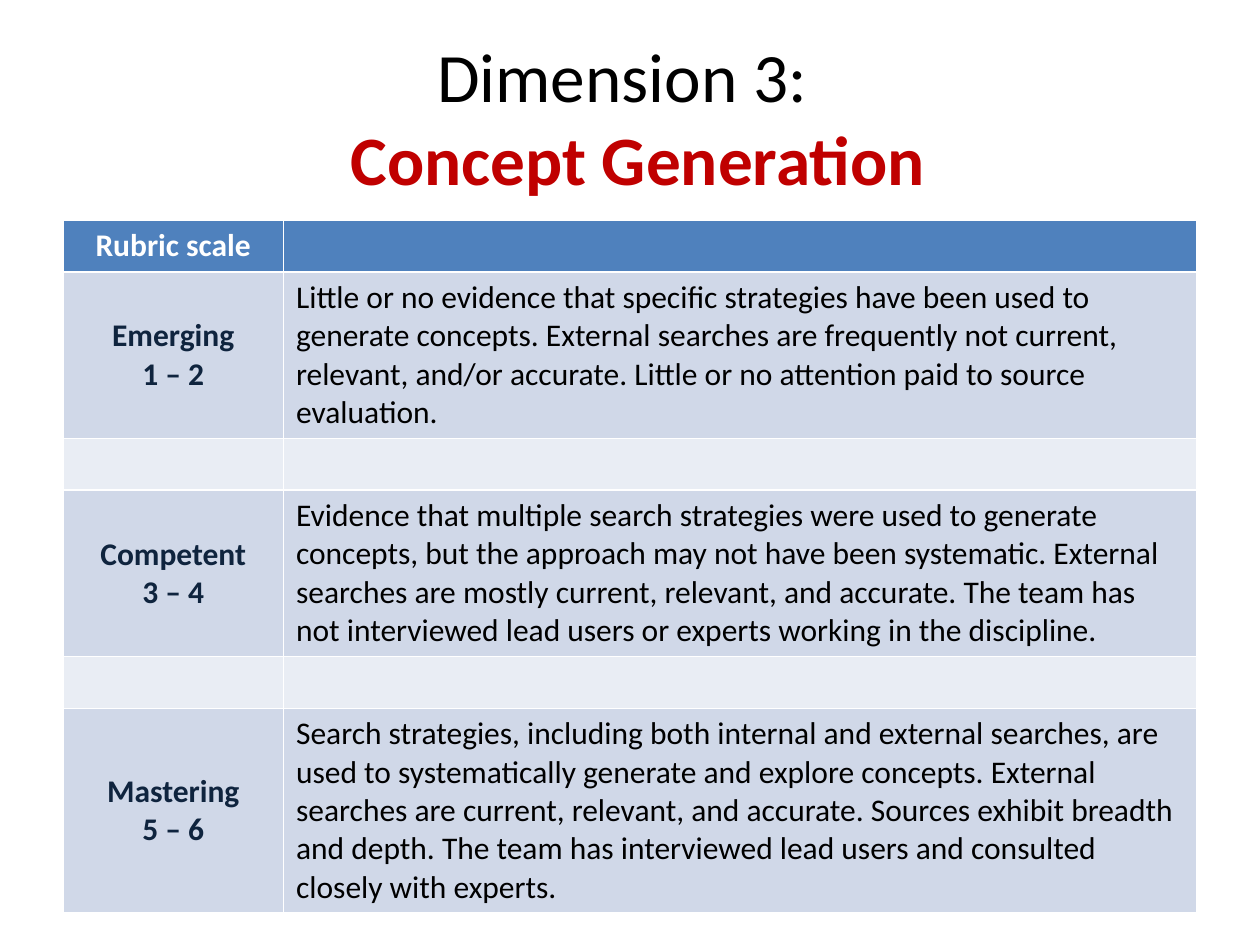
from dataclasses import dataclass

from pptx import Presentation
from pptx.dml.color import RGBColor
from pptx.enum.text import MSO_ANCHOR, MSO_AUTO_SIZE, PP_ALIGN
from pptx.util import Inches, Pt


@dataclass(frozen=True)
class Theme:
    font: str = "Calibri"
    title_size: float = 39.6
    body_size: float = 18
    black: str = "000000"
    white: str = "FFFFFF"
    accent: str = "C00000"
    level: str = "0F243E"
    header_fill: str = "4F81BD"
    level_fill: str = "D0D8E8"
    spacer_fill: str = "E9EDF4"


THEME = Theme()
COLUMN_WIDTHS = (1.75, 7.25)
THIN_ROW = 0.41

# Level name, score range, description paragraphs, row height
LEVELS = [
    ("Emerging", "1 – 2", [
        "Little or no evidence that specific strategies have been used to generate "
        "concepts. External searches are frequently not current,",
        "relevant, and/or accurate. Little or no attention paid to source evaluation.",
    ], 1.32),
    ("Competent", "3 – 4", [
        "Evidence that multiple search strategies were used to generate concepts, but "
        "the approach may not have been systematic. External",
        "searches are mostly current, relevant, and accurate. The team has not "
        "interviewed lead users or experts working in the discipline.",
    ], 1.32),
    ("Mastering", "5 – 6", [
        "Search strategies, including both internal and external searches, are used to "
        "systematically generate and explore concepts. External searches are current, "
        "relevant, and accurate. Sources exhibit breadth and depth. The team has "
        "interviewed lead users and consulted closely with experts.",
    ], 1.62),
]


def style_font(font, size, color, bold=False):
    font.name = THEME.font
    font.size = Pt(size)
    font.bold = bold
    font.color.rgb = RGBColor.from_string(color)


def fill_title(title, lead, dimension):
    title.left, title.top = Inches(0.5), Inches(0.3)
    title.width, title.height = Inches(9), Inches(1.25)
    frame = title.text_frame
    frame.auto_size = MSO_AUTO_SIZE.NONE
    frame.vertical_anchor = MSO_ANCHOR.MIDDLE
    heading = frame.paragraphs[0]
    heading.alignment = PP_ALIGN.CENTER
    lead_run = heading.add_run()
    lead_run.text = lead
    style_font(lead_run.font, THEME.title_size, THEME.black)
    heading.add_line_break()
    dimension_run = heading.add_run()
    dimension_run.text = dimension
    style_font(dimension_run.font, THEME.title_size, THEME.accent, bold=True)


def fill_cell(cell, lines, color, bold=False, align=PP_ALIGN.LEFT, anchor=MSO_ANCHOR.TOP):
    cell.text = "\n".join(lines)
    cell.vertical_anchor = anchor
    for paragraph in cell.text_frame.paragraphs:
        paragraph.alignment = align
        style_font(paragraph.font, THEME.body_size, color, bold)


def shade_row(row, height, color):
    row.height = Inches(height)
    for cell in row.cells:
        cell.fill.solid()
        cell.fill.fore_color.rgb = RGBColor.from_string(color)


def add_rubric(slide):
    row_count = 2 * len(LEVELS)
    heights = [THIN_ROW] * row_count
    heights[1::2] = [level[3] for level in LEVELS]
    rubric = slide.shapes.add_table(
        row_count, len(COLUMN_WIDTHS), Inches(0.5), Inches(1.75),
        Inches(sum(COLUMN_WIDTHS)), Inches(sum(heights))).table
    for column, width in zip(rubric.columns, COLUMN_WIDTHS):
        column.width = Inches(width)

    # Header, then levels separated by spacer rows
    for index, (row, height) in enumerate(zip(rubric.rows, heights)):
        spacer_or_level = THEME.level_fill if index % 2 else THEME.spacer_fill
        shade_row(row, height, spacer_or_level if index else THEME.header_fill)
    fill_cell(rubric.cell(0, 0), ["Rubric scale"], THEME.white, True, PP_ALIGN.CENTER)
    for index, (name, score, description, _) in enumerate(LEVELS):
        level_row = 2 * index + 1
        fill_cell(rubric.cell(level_row, 0), [name, score], THEME.level, True,
                  PP_ALIGN.CENTER, MSO_ANCHOR.MIDDLE)
        fill_cell(rubric.cell(level_row, 1), description, THEME.black)


def main():
    deck = Presentation()
    deck.slide_width, deck.slide_height = Inches(10), Inches(7.5)
    slide = deck.slides.add_slide(deck.slide_layouts[5])
    fill_title(slide.shapes.title, "Dimension 3: ", " Concept Generation")
    add_rubric(slide)
    deck.save("out.pptx")


if __name__ == "__main__":
    main()
